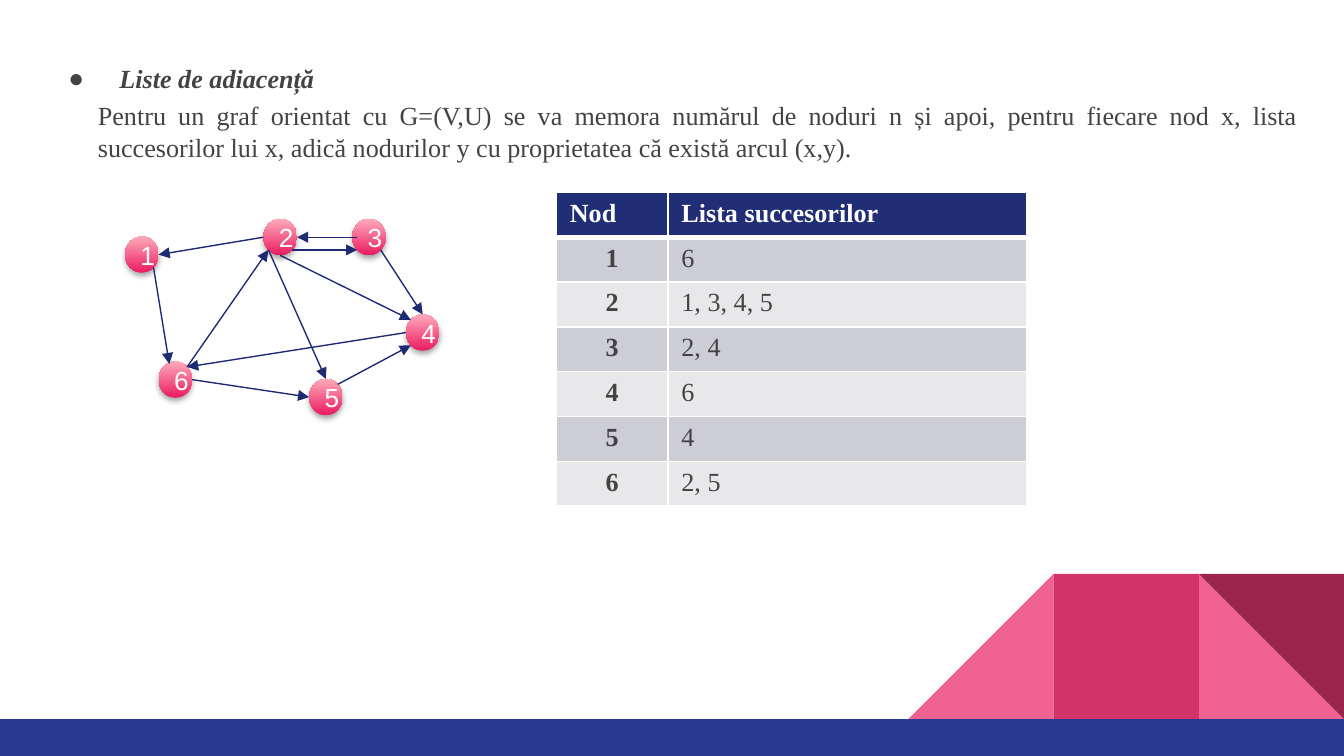
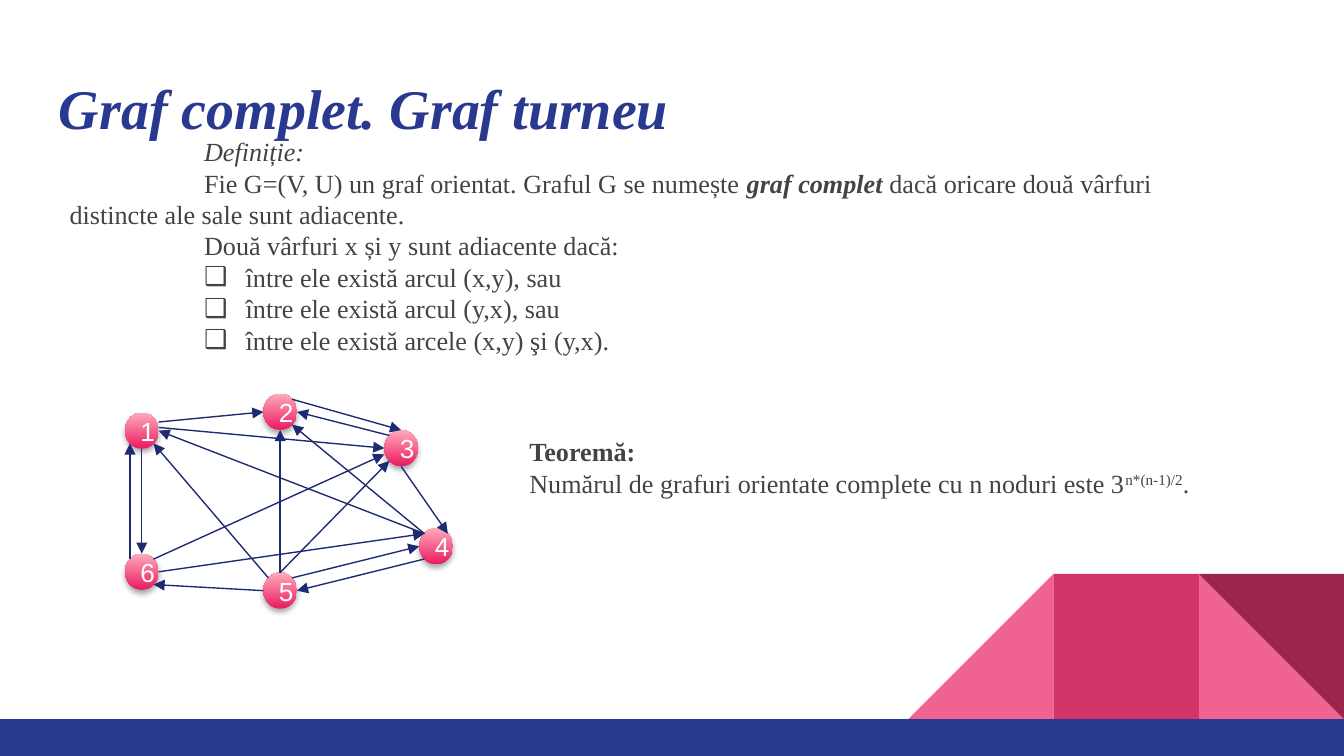
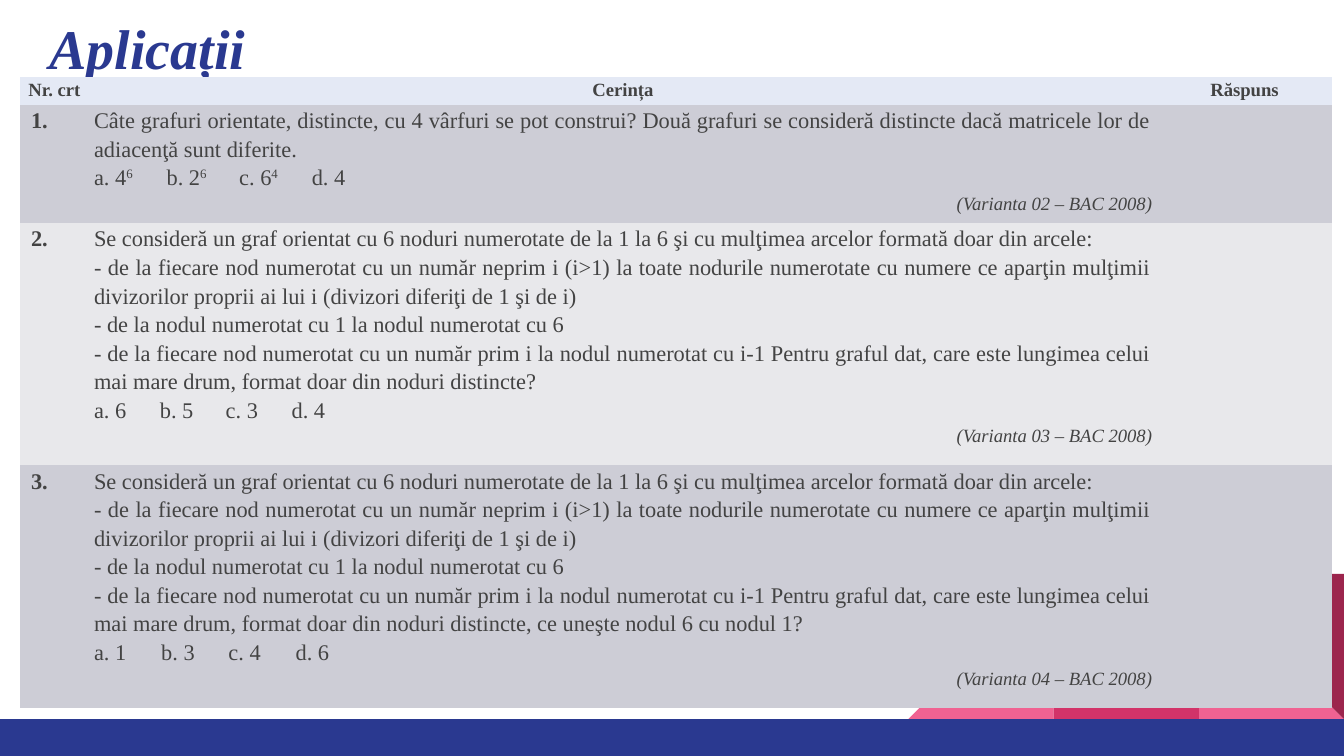
from lxml.etree import SubElement
from pptx import Presentation
from pptx.dml.color import RGBColor
from pptx.enum.shapes import MSO_CONNECTOR, MSO_SHAPE
from pptx.enum.text import MSO_ANCHOR, PP_ALIGN
from pptx.oxml.ns import qn
from pptx.util import Inches, Pt

# Grid: 40 columns by 22.5 rows of quarter inches
UNIT = Inches(0.25)
COLS, ROWS = 40, 22.5

SERIF, SANS = "Times New Roman", "Arial"
WHITE = RGBColor(0xFF, 0xFF, 0xFF)
INK = RGBColor(0x43, 0x43, 0x43)
BLUE = RGBColor(0x2A, 0x39, 0x90)
NAVY = RGBColor(0x21, 0x2D, 0x74)
ARROW = RGBColor(0x1E, 0x2B, 0x73)
PALE = RGBColor(0xE4, 0xE9, 0xF5)
GREY = RGBColor(0xCD, 0xCD, 0xD6)
LIGHT = RGBColor(0xE8, 0xE8, 0xEB)
PINK = RGBColor(0xF0, 0x62, 0x92)
ROSE = RGBColor(0xD2, 0x33, 0x69)
WINE = RGBColor(0x9C, 0x25, 0x4D)
NODE_LOW = RGBColor(0xEA, 0x1B, 0x61)
NODE_TOP = RGBColor(0xFF, 0xAA, 0xBA)

LEFT, MID, RIGHT, FULL = PP_ALIGN.LEFT, PP_ALIGN.CENTER, PP_ALIGN.RIGHT, PP_ALIGN.JUSTIFY
PLAIN_TABLE = "{2D5ABB26-0587-4C30-8999-92F81FD0307C}"

# Arc ends as shares of a node's width and height
NODE_W, NODE_H = 1, 1.08
PORTS = {
    "n": (0.5, 0), "s": (0.5, 1), "w": (0, 0.5), "e": (1, 0.5),
    "nw": (0.15, 0.15), "ne": (0.85, 0.15), "sw": (0.15, 0.85), "se": (0.85, 0.85),
    "nnw": (0.32, 0.07), "ene": (1, 0.26), "em": (1, 0.41),
    "wm": (0.16, 0.5), "wsw": (0, 0.67),
}


def grid(*units):
    return [round(u * UNIT) for u in units]


# Text
def write(para, runs, size=14, color=INK, face=SERIF, align=LEFT, space=None):
    """Runs are a string or (text, style) pairs; style letters: b, i, ^."""
    pairs = [(runs, "")] if isinstance(runs, str) else runs
    for text, style in pairs:
        if text == "\n":
            para.add_line_break()
            continue
        run = para.add_run()
        run.text = text
        run.font.bold, run.font.italic = "b" in style, "i" in style
        if "^" in style:
            run.font._element.set("baseline", "30000")
    for font in (para.font, *(run.font for run in para.runs)):
        font.size, font.name, font.color.rgb = Pt(size), face, color
    para.alignment = align
    if space:
        para.line_spacing = space


def indent(para, margin, first, bullet=None):
    props = para._p.get_or_add_pPr()
    props.set("marL", str(Inches(margin)))
    props.set("indent", str(Inches(first)))
    if bullet:
        SubElement(props, qn("a:buFont")).set("typeface", SANS)
        SubElement(props, qn("a:buChar")).set("char", bullet)


def tabs(para, step, count):
    stops = SubElement(para._p.get_or_add_pPr(), qn("a:tabLst"))
    for i in range(1, count + 1):
        stop = SubElement(stops, qn("a:tab"))
        stop.set("pos", str(Inches(step * i)))
        stop.set("algn", "l")


def paras(frame, count):
    return [frame.paragraphs[0]] + [frame.add_paragraph() for _ in range(count - 1)]


def textbox(slide, area, top=0.05, anchor=MSO_ANCHOR.TOP):
    frame = slide.shapes.add_textbox(*grid(*area)).text_frame
    frame.word_wrap = True
    frame.vertical_anchor = anchor
    frame.margin_top = Inches(top)
    return frame


def title(slide, text, col, row):
    frame = textbox(slide, (col, row, 37.28, 2.64), 0.1)
    write(frame.paragraphs[0], [(text, "bi")], 30, BLUE)


# Shared corner and footer band
def block(slide, kind, area, color):
    shape = slide.shapes.add_shape(kind, *grid(*area))
    shape.shadow.inherit = False
    shape.fill.solid()
    shape.fill.fore_color.rgb = color
    shape.line.fill.background()
    return shape


def new_slide(deck):
    slide = deck.slides.add_slide(deck.slide_layouts[6])
    side, foot = 4.32, 21.4
    last, mid, first = [(COLS - n * side, foot - side, side, side) for n in (1, 2, 3)]
    block(slide, MSO_SHAPE.RIGHT_TRIANGLE, last, PINK)
    slope = block(slide, MSO_SHAPE.RIGHT_TRIANGLE, first, PINK)
    slope._element.spPr.xfrm.set("flipH", "1")
    block(slide, MSO_SHAPE.RECTANGLE, mid, ROSE)
    block(slide, MSO_SHAPE.RIGHT_TRIANGLE, last, WINE).rotation = 180
    block(slide, MSO_SHAPE.RECTANGLE, (0, foot, COLS, ROWS - foot), BLUE)
    return slide


# Directed graph
def node(slide, name, col, row):
    shape = block(slide, MSO_SHAPE.OVAL, (col, row, NODE_W, NODE_H), NODE_LOW)
    shape.fill.gradient()
    shape.fill.gradient_angle = 90
    for stop, color, place in zip(shape.fill.gradient_stops, (NODE_LOW, NODE_TOP), (0, 1)):
        stop.color.rgb, stop.position = color, place
    effects = shape._element.spPr.find(qn("a:effectLst"))
    shade = SubElement(effects, qn("a:outerShdw"), blurRad=str(Pt(3.1)),
                       dist=str(Pt(1.8)), dir="5400000", rotWithShape="0")
    black = SubElement(shade, qn("a:srgbClr"), val="000000")
    SubElement(black, qn("a:alpha"), val="35000")
    shape.text_frame.vertical_anchor = MSO_ANCHOR.MIDDLE
    write(shape.text_frame.paragraphs[0], name, 14, WHITE, SANS, MID)


def arc(slide, start, end):
    line = slide.shapes.add_connector(MSO_CONNECTOR.STRAIGHT, *grid(*start, *end))
    line.line.color.rgb = ARROW
    line.line.width = Pt(0.75)
    SubElement(line.line._get_or_add_ln(), qn("a:tailEnd"), type="triangle")
    SubElement(line._element.spPr, qn("a:effectLst"))


def graph(slide, nodes, arcs):
    """Arcs are pairs such as '2w 1e': a node's digit, then its port."""
    def spot(end):
        (col, row), (dx, dy) = nodes[end[0]], PORTS[end[1:]]
        return col + dx * NODE_W, row + dy * NODE_H

    for name, place in nodes.items():
        node(slide, name, *place)
    for pair in arcs.split(", "):
        start, end = pair.split()
        arc(slide, spot(start), spot(end))


# Tables
def table(slide, col, row, widths, heights):
    frame = slide.shapes.add_table(len(heights), len(widths),
                                   *grid(col, row, sum(widths), sum(heights)))
    frame._element.find(".//" + qn("a:tableStyleId")).text = PLAIN_TABLE
    made = frame.table
    for part, width in zip(made.columns, grid(*widths)):
        part.width = width
    for part, height in zip(made.rows, grid(*heights)):
        part.height = height
    return made


def paint(cell, color):
    cell.fill.solid()
    cell.fill.fore_color.rgb = color


def border(cell, foot):
    props = cell._tc.get_or_add_tcPr()
    for side, width in zip("LRTB", (1, 1, 1, foot)):
        edge = SubElement(props, qn("a:ln" + side), w=str(Pt(width)))
        fill = SubElement(edge, qn("a:solidFill"))
        SubElement(fill, qn("a:srgbClr"), val=str(WHITE))


def stripe(row):
    return GREY if row % 2 else LIGHT


def successors(slide, lists):
    rows = [("Nod", "Lista succesorilor"), *lists]
    made = table(slide, 16.56, 5.72, (3.32, 10.68), [1.33] * len(rows))
    for r, texts in enumerate(rows):
        for c, text in enumerate(texts):
            cell = made.cell(r, c)
            border(cell, 1 if r else 3)
            paint(cell, stripe(r) if r else NAVY)
            bold = "b" if r == 0 or c == 0 else ""
            write(cell.text_frame.paragraphs[0], [(text, bold)],
                  color=INK if r else WHITE, align=MID if r and c == 0 else LEFT)


def choices(para, options, step):
    runs = []
    for i, option in enumerate(options):
        base, _, power = option.partition("^")
        runs.append(("\t" + base if i else base, ""))
        if power:
            runs.append((power, "^"))
    tabs(para, step, len(options) - 1)
    write(para, runs, 12, space=1.15)


def tasks(slide, items):
    made = table(slide, 0.6, 2.28, (2.04, 31.8, 5.2), (0.84, 3.28, 6.64, 6.64))
    for r in range(len(items) + 1):
        for c in range(3):
            cell = made.cell(r, c)
            cell.margin_left = cell.margin_right = Inches(0.04)
            cell.margin_top = cell.margin_bottom = 0
            paint(cell, stripe(r) if r else PALE)
    for c, head in enumerate(("Nr. crt", "Cerința", "Răspuns")):
        write(made.cell(0, c).text_frame.paragraphs[0], [(head, "b")], 10,
              align=MID, space=1.15)
    for r, (lines, options, step, origin) in enumerate(items, 1):
        write(made.cell(r, 0).text_frame.paragraphs[0], [(f" {r}.", "b")], 12, space=1.15)
        *body, pick, credit = paras(made.cell(r, 1).text_frame, len(lines) + 2)
        for para, line in zip(body, lines):
            write(para, line, 12, align=FULL, space=1.15)
        choices(pick, options, step)
        write(credit, [(origin, "i")], 10, align=RIGHT, space=1.15)


# Slides
def adjacency(deck):
    slide = new_slide(deck)
    head = textbox(slide, (1.16, 1.32, 37.28, 14.6), 0.1).paragraphs[0]
    indent(head, 0.5, -0.38, "●")
    write(head, [("Liste de adiacență", "bi")], space=1.15)
    graph(slide,
          {"1": (3.72, 7.04), "6": (4.72, 10.76), "2": (7.84, 6.52),
           "5": (9.2, 11.28), "3": (10.48, 6.52), "4": (12.08, 9.36)},
          "2w 1e, 1se 6nnw, 3wm 2e, 2se 3sw, 2s 4nw, 3se 4n, "
          "5ne 4sw, 6e 5w, 4w 6ne, 2sw 5n, 6ne 2sw")
    note = textbox(slide, (2.52, 2.76, 36.52, 2.28), anchor=MSO_ANCHOR.MIDDLE)
    write(note.paragraphs[0],
          "Pentru un graf orientat cu G=(V,U) se va memora numărul de noduri n și apoi, "
          "pentru fiecare nod x, lista succesorilor lui x, adică nodurilor y cu "
          "proprietatea că există arcul (x,y).", align=FULL)
    successors(slide, [("1", "6"), ("2", "1, 3, 4, 5"), ("3", "2, 4"),
                       ("4", "6"), ("5", "4"), ("6", "2, 5")])


def complete(deck):
    slide = new_slide(deck)
    title(slide, "Graf complet. Graf turneu", 1.36, 1.8)
    lead = [
        [("Definiție:", "i")],
        [("Fie G=(V, U) un graf orientat. Graful G se numește ", ""),
         ("graf complet ", "bi"), ("dacă oricare două vârfuri", ""), ("\n", ""),
         ("distincte ale sale sunt adiacente.", "")],
        "Două vârfuri x și y sunt adiacente dacă:",
    ]
    cases = ["între ele există arcul (x,y), sau", "între ele există arcul (y,x), sau",
             "între ele există arcele (x,y) şi (y,x)."]
    frame = textbox(slide, (1.68, 4.04, 33.36, 6.8), 0)
    for i, (para, runs) in enumerate(zip(paras(frame, 6), lead + cases)):
        if i < len(lead):
            indent(para, 0, 1)
        else:
            indent(para, 1.31, -0.31, "❑")
        write(para, runs)
    graph(slide,
          {"1": (3.72, 12.28), "6": (3.72, 16.48), "2": (7.84, 11.72),
           "5": (7.84, 17.04), "3": (11.44, 12.8), "4": (12.48, 15.72)},
          "1ene 2w, 1s 6n, 5nw 1se, 4nw 1e, 1em 3w, 6nw 1sw, 3nw 2e, 2ne 3n, 3s 4ne, "
          "5n 3sw, 6ne 3wsw, 4nw 2se, 5ne 4w, 4sw 5e, 6e 4nw, 5w 6se, 5n 2s")
    frame = textbox(slide, (15.36, 12.76, 22.48, 2.28), anchor=MSO_ANCHOR.MIDDLE)
    name, claim = paras(frame, 2)
    write(name, [("Teoremă:", "b")], align=FULL)
    write(claim, [("Numărul de grafuri orientate complete cu n noduri este 3", ""),
                  ("n*(n-1)/2", "^"), (".", "")], align=FULL)


def exercises(deck):
    slide = new_slide(deck)
    title(slide, "Aplicații", 1.08, 0)
    rules = [
        "Se consideră un graf orientat cu 6 noduri numerotate de la 1 la 6 şi cu mulţimea "
        "arcelor formată doar din arcele:",
        "- de la fiecare nod numerotat cu un număr neprim i (i>1) la toate nodurile "
        "numerotate cu numere ce aparţin mulţimii divizorilor proprii ai lui i (divizori "
        "diferiţi de 1 şi de i)",
        "- de la nodul numerotat cu 1 la nodul numerotat cu 6",
    ]
    ask = ("- de la fiecare nod numerotat cu un număr prim i la nodul numerotat cu i-1 "
           "Pentru graful dat, care este lungimea celui mai mare drum, format doar din "
           "noduri distincte")
    count = ("Câte grafuri orientate, distincte, cu 4 vârfuri se pot construi? Două grafuri "
             "se consideră distincte dacă matricele lor de adiacenţă sunt diferite.")
    tasks(slide, [
        ([count], ("a. 4^6", "b. 2^6", "c. 6^4", "d. 4"), 0.54,
         "(Varianta 02 – BAC 2008)"),
        (rules + [ask + "?"], ("a. 6", "b. 5", "c. 3", "d. 4"), 0.49,
         "(Varianta 03 – BAC 2008)"),
        (rules + [ask + ", ce uneşte nodul 6 cu nodul 1?"],
         ("a. 1", "b. 3", "c. 4", "d. 6"), 0.5, "(Varianta 04 – BAC 2008)"),
    ])


def main():
    deck = Presentation()
    deck.slide_width, deck.slide_height = grid(COLS, ROWS)
    adjacency(deck)
    complete(deck)
    exercises(deck)
    deck.save("out.pptx")


if __name__ == "__main__":
    main()
